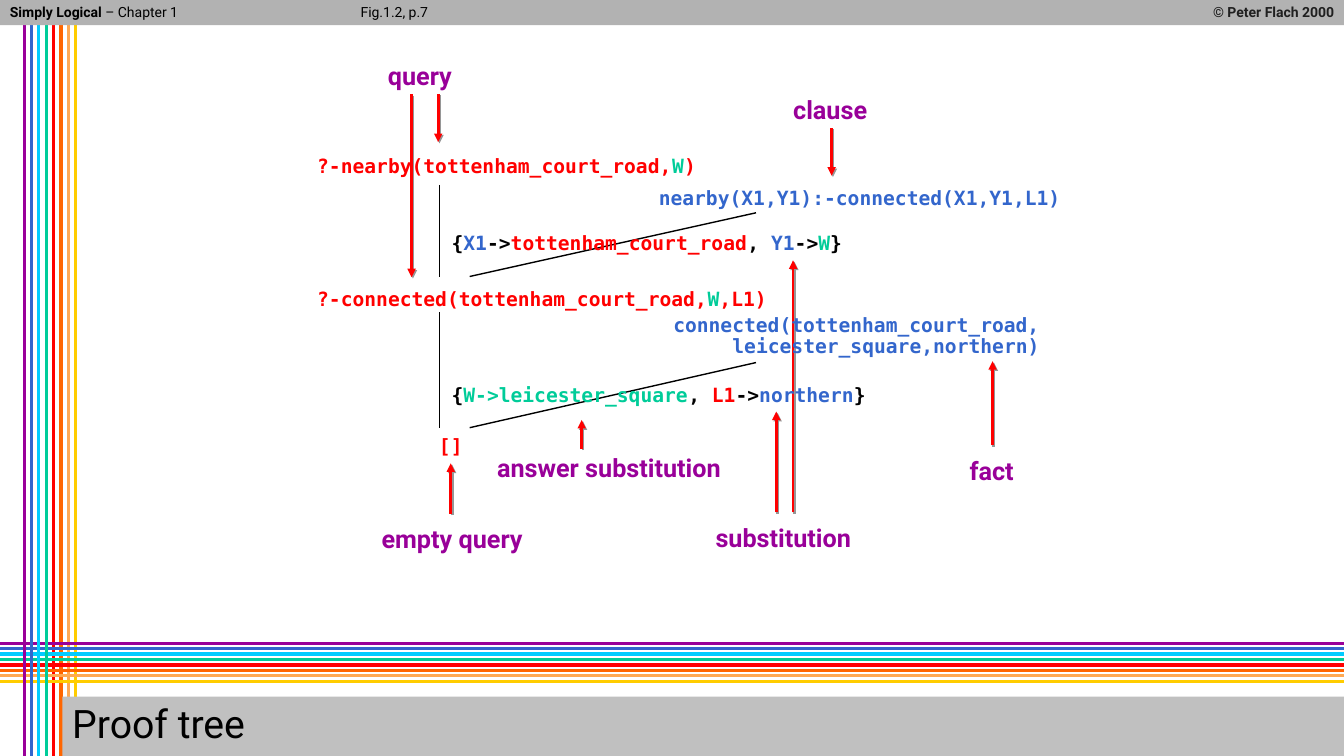
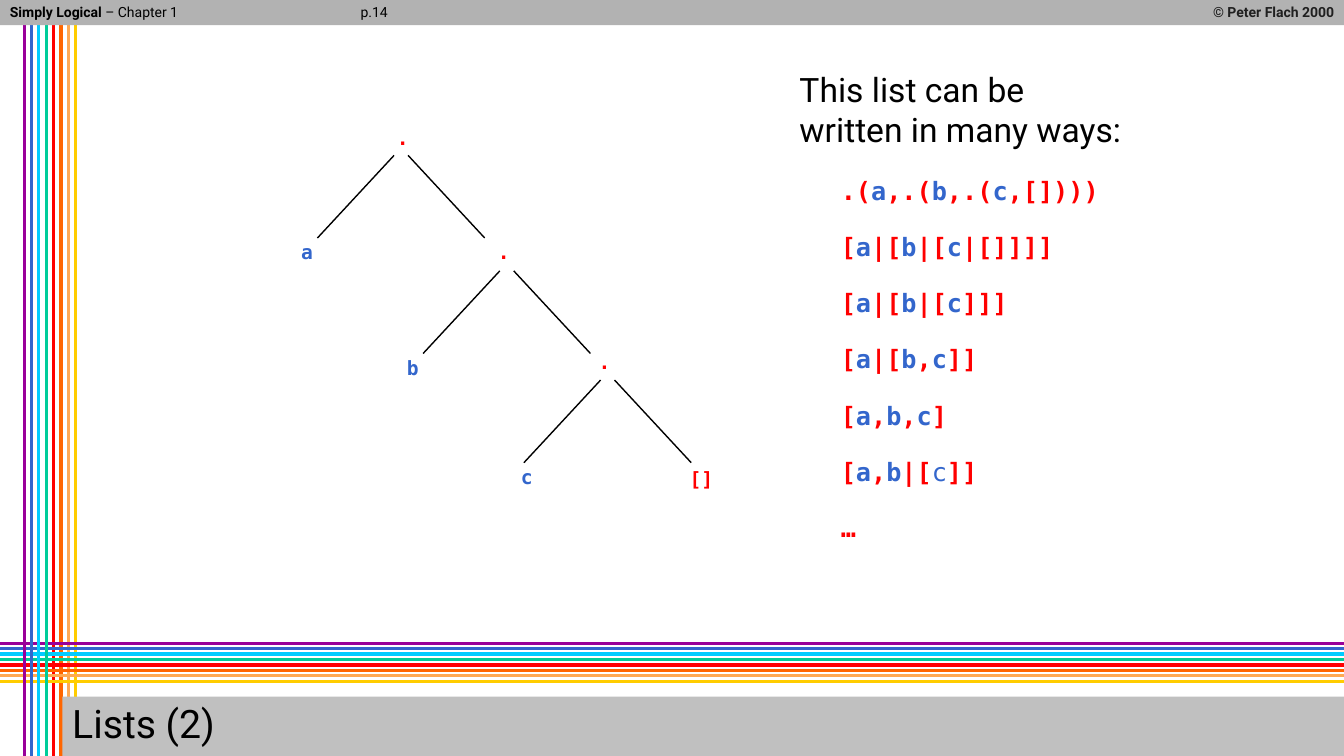
"""Build two lecture slides on logic programming: a proof tree and list notations."""
from itertools import groupby

from pptx import Presentation
from pptx.dml.color import RGBColor
from pptx.enum.shapes import MSO_CONNECTOR as Connector, MSO_SHAPE as Preset
from pptx.enum.text import MSO_ANCHOR as Anchor, PP_ALIGN as Align
from pptx.oxml import parse_xml
from pptx.oxml.ns import nsdecls, qn
from pptx.util import Pt

COLORS = {
    "purple": "990099", "blue": "3366CC", "cyan": "00CCFF", "green": "00CC99",
    "red": "FF0000", "orange": "FF6600", "apricot": "FFA953", "yellow": "FFCC00",
    "black": "000000", "ink": "202020", "header": "B2B2B2", "title": "C0C0C0",
    "shadow": "969696",
}
STRIPES = list(COLORS)[:8]
WIDTH, HEIGHT = 960, 540
SMALL = {"name": "Roboto", "size": Pt(10), "bold": False}
TITLE = {"name": "Roboto", "size": Pt(28), "bold": False}
LABEL = {"name": "Roboto", "size": Pt(18), "bold": True}
BODY = {"name": "Roboto", "size": Pt(24), "bold": False}
CODE = {"name": "DejaVu Sans Mono", "size": Pt(14), "bold": True}
FORMULA = {"name": "DejaVu Sans Mono", "size": Pt(18), "bold": True}
CODE_ADVANCE, CODE_PADDING = 8.43, 18
EMPTY_EFFECTS = f'<a:effectLst {nsdecls("a")}/>'
SHADOW_EFFECTS = (
    f'<a:effectLst {nsdecls("a")}><a:outerShdw dist="{Pt(1.4)}" dir="2700000">'
    f'<a:srgbClr val="{COLORS["shadow"]}"/></a:outerShdw></a:effectLst>'
)
ARROWHEAD = f'<a:tailEnd {nsdecls("a")} type="triangle"/>'


def add_line(slide, points, color, width, arrow=False):
    line = slide.shapes.add_connector(Connector.STRAIGHT, *map(Pt, points))
    line.line.color.rgb = RGBColor.from_string(COLORS[color])
    line.line.width = Pt(width)
    properties = line._element.spPr
    if arrow:
        properties.find(qn("a:ln")).append(parse_xml(ARROWHEAD))
    properties.append(parse_xml(SHADOW_EFFECTS if arrow else EMPTY_EFFECTS))


def add_paragraph(shape, runs, style, shadow=False, **layout):
    frame = shape.text_frame
    frame.word_wrap = True
    paragraph = frame.paragraphs[0]
    if paragraph.runs:
        paragraph = frame.add_paragraph()
    for name, value in {"alignment": Align.LEFT, "line_spacing": 0.9, **layout}.items():
        setattr(paragraph, name, value)
    for text, color, *weight in runs:
        run = paragraph.add_run()
        run.text = text
        for name, value in style.items():
            setattr(run.font, name, value)
        if weight:
            run.font.bold = weight[0]
        run.font.color.rgb = RGBColor.from_string(COLORS[color])
        if shadow:
            fill = run._r.rPr.find(qn("a:solidFill"))
            fill.addnext(parse_xml(SHADOW_EFFECTS))
    return paragraph


presentation = Presentation()
presentation.slide_width, presentation.slide_height = Pt(WIDTH), Pt(HEIGHT)

verticals = [((17.3 + 5.25 * i, 0, 17.3 + 5.25 * i, HEIGHT), color)
             for i, color in enumerate(STRIPES)]
horizontals = [((WIDTH, 459.4 + 3.9 * i, 0, 459.4 + 3.9 * i), color)
               for i, color in enumerate(STRIPES)]

slides = []
for title, reference in [("Proof tree", "Fig.1.2, p.7"), ("Lists (2)", "p.14")]:
    slide = presentation.slides.add_slide(presentation.slide_layouts[6])
    slides.append(slide)
    for points, color in verticals[4:] + horizontals + verticals[:4]:
        add_line(slide, points, color, 2.25)
    for box, color in [((0, 0, WIDTH, 18), "header"), ((44.5, 497.5, 915.5, 42.5), "title")]:
        band = slide.shapes.add_shape(Preset.RECTANGLE, *map(Pt, box))
        band.shadow.inherit = False
        band.fill.solid()
        band.fill.fore_color.rgb = RGBColor.from_string(COLORS[color])
        band.line.fill.background()
    add_paragraph(band, [(title, "black")], TITLE)
    band.text_frame.vertical_anchor = Anchor.MIDDLE
    for left, width, runs, alignment in [
        (0, 192, [("Simply Logical", "black", True), (" – Chapter 1", "black")], Align.LEFT),
        (250.5, 144, [(reference, "black")], Align.LEFT),
        (700.5, 259.5, [("© Peter Flach 2000", "ink", True)], Align.RIGHT),
    ]:
        header = slide.shapes.add_textbox(Pt(left), Pt(0), Pt(width), Pt(18))
        add_paragraph(header, runs, SMALL, alignment=alignment)

proof_slide, list_slide = slides

for left, top, width, text in [
    (559.5, 66, 75, "clause"),
    (685.5, 324, 50, "fact"),
    (265.5, 373, 125, "empty query"),
    (348, 322, 188, "answer substitution"),
    (504, 372, 121, "substitution"),
    (270, 42, 67, "query"),
]:
    label = proof_slide.shapes.add_textbox(Pt(left), Pt(top), Pt(width), Pt(26.5))
    add_paragraph(label, [(text, "purple")], LABEL, shadow=True)

for x, start, end in [
    (594, 91.5, 125.5), (709, 318, 258), (322, 367, 331), (415.5, 320.5, 300),
    (554.5, 366, 294), (566.5, 366, 186), (313, 67, 101.5), (294, 67.5, 198),
]:
    add_line(proof_slide, (x, start, x, end), "red", 2, arrow=True)

for points in [
    (314, 132, 314, 198), (335.5, 197.5, 540, 152),
    (314, 223, 314, 306), (335.5, 305.5, 540, 259),
]:
    add_line(proof_slide, points, "black", 1)

for left, top, runs in [
    (219.5, 108, [("?-nearby(tottenham_court_road,", "red"), ("W", "green"), (")", "red")]),
    (463.5, 131, [("nearby(X1,Y1):-connected(X1,Y1,L1)", "blue")]),
    (315.5, 163.5, [("{", "black"), ("X1", "blue"), ("->", "black"),
                    ("tottenham_court_road", "red"), (", ", "black"), ("Y1", "blue"),
                    ("->", "black"), ("W", "green"), ("}", "black")]),
    (219.5, 203, [("?-connected(tottenham_court_road,", "red"), ("W", "green"),
                  (",L1)", "red")]),
    (315.5, 271.5, [("{", "black"), ("W->leicester_square", "green"), (", ", "black"),
                    ("L1", "red"), ("->", "black"), ("northern", "blue"), ("}", "black")]),
    (306.5, 308, [("[]", "red")]),
]:
    width = CODE_ADVANCE * sum(len(text) for text, color in runs) + CODE_PADDING
    code = proof_slide.shapes.add_textbox(Pt(left), Pt(top), Pt(width), Pt(23))
    add_paragraph(code, runs, CODE)

fact = proof_slide.shapes.add_textbox(Pt(466.5), Pt(222), Pt(283.5), Pt(38))
for text in ["connected(tottenham_court_road,", "leicester_square,northern)"]:
    add_paragraph(fact, [(text, "blue")], CODE, alignment=Align.RIGHT)

for x, y in [(286.5, 111), (362, 193.5), (434, 271.5)]:
    for side in (1, -1):
        add_line(list_slide, (x + 5 * side, y, x + 59.75 * side, y + 59), "black", 1)

for left, top, text in [
    (276.5, 88, "."), (208, 170, "a"), (348.5, 170, "."), (283.5, 252.5, "b"),
    (420.5, 248.5, "."), (365, 330.5, "c"), (485.5, 332, "[]"),
]:
    width = CODE_ADVANCE * len(text) + CODE_PADDING
    node = list_slide.shapes.add_textbox(Pt(left), Pt(top), Pt(width), Pt(23))
    add_paragraph(node, [(text, "blue" if text.isalpha() else "red")], CODE)

body = list_slide.shapes.add_textbox(Pt(564), Pt(45.5), Pt(246), Pt(381))
add_paragraph(body, [("This list can be written in many ways:", "black")], BODY,
              line_spacing=1.0)
for formula in [
    ".(a,.(b,.(c,[])))", "[a|[b|[c|[]]]]", "[a|[b|[c]]]", "[a|[b,c]]", "[a,b,c]",
    "[a,b|[c]]", "…",
]:
    runs = []
    for is_element, letters in groupby(formula, str.isalpha):
        text = "".join(letters)
        bold = (formula, text) != ("[a,b|[c]]", "c")
        runs.append((text, "blue" if is_element else "red", bold))
    paragraph = add_paragraph(body, runs, FORMULA, line_spacing=1.0, space_before=Pt(18.5))
    paragraph._p.get_or_add_pPr().set("marL", str(Pt(29.5)))

presentation.save("out.pptx")
